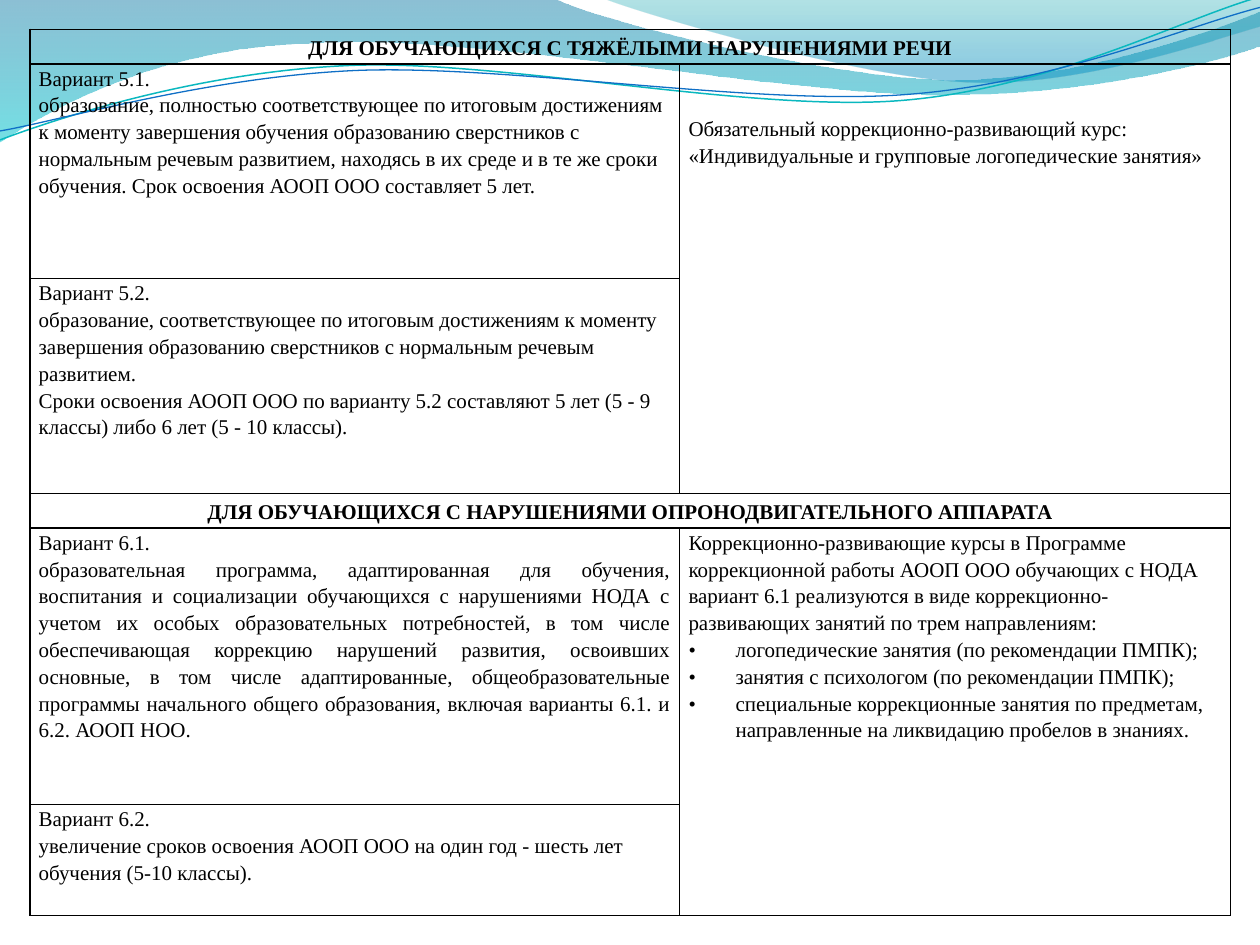
from math import cos, radians, sin

from lxml.etree import SubElement
from pptx import Presentation
from pptx.dml.color import RGBColor
from pptx.enum.text import MSO_ANCHOR, PP_ALIGN
from pptx.oxml.ns import qn
from pptx.util import Cm, Pt

COLORS = {"text": "000000", "border": "000000", "deep": "0074A1", "aqua": "00C6CF",
          "teal": "00A1A9", "sky": "008BBF", "thread": "0AB8BF", "blue": "0F6FC6"}
FORMATS = {
    "heading": {"font": {"bold": True}, "para": {"alignment": PP_ALIGN.CENTER}},
    "plain": {"font": {"bold": False}, "para": {"alignment": PP_ALIGN.LEFT}},
    "justified": {"font": {"bold": False}, "para": {"alignment": PP_ALIGN.JUSTIFY}},
    "bullet": {"font": {"bold": False}, "para": {"alignment": PP_ALIGN.LEFT}},
}
COLUMNS = [13.1, 11.11]
ROWS = [0.7, 4.33, 4.33, 0.7, 5.57, 2.24]
MERGES = [(0, 0, 0, 1), (1, 1, 2, 1), (3, 0, 3, 1), (4, 1, 5, 1)]
CELLS = {
    (0, 0): [("heading", "ДЛЯ ОБУЧАЮЩИХСЯ С ТЯЖЁЛЫМИ НАРУШЕНИЯМИ РЕЧИ")],
    (1, 0): [
        ("plain", "Вариант 5.1."),
        ("plain", "образование, полностью соответствующее по итоговым достижениям к моменту "
                  "завершения обучения образованию сверстников с нормальным речевым развитием, "
                  "находясь в их среде и в те же сроки обучения. Срок освоения АООП ООО "
                  "составляет 5 лет."),
    ],
    (1, 1): [("plain", "Обязательный коррекционно-развивающий курс: "
                       "«Индивидуальные и групповые логопедические занятия»")],
    (2, 0): [
        ("plain", "Вариант 5.2."),
        ("plain", "образование, соответствующее по итоговым достижениям к моменту завершения "
                  "образованию сверстников с нормальным речевым развитием."),
        ("plain", "Сроки освоения АООП ООО по варианту 5.2 составляют 5 лет (5 - 9 классы) "
                  "либо 6 лет (5 - 10 классы)."),
    ],
    (3, 0): [("heading", "ДЛЯ ОБУЧАЮЩИХСЯ С НАРУШЕНИЯМИ ОПРОНОДВИГАТЕЛЬНОГО АППАРАТА")],
    (4, 0): [
        ("plain", "Вариант 6.1."),
        ("justified", "образовательная программа, адаптированная для обучения, воспитания и "
                      "социализации обучающихся с нарушениями НОДА с учетом их особых "
                      "образовательных потребностей, в том числе обеспечивающая коррекцию "
                      "нарушений развития, освоивших основные, в том числе адаптированные, "
                      "общеобразовательные программы начального общего образования, включая "
                      "варианты 6.1. и 6.2. АООП НОО."),
    ],
    (4, 1): [
        ("plain", "Коррекционно-развивающие курсы в Программе коррекционной работы АООП ООО "
                  "обучающих с НОДА вариант 6.1 реализуются в виде коррекционно-развивающих "
                  "занятий по трем направлениям:"),
        ("bullet", "логопедические занятия (по рекомендации ПМПК);"),
        ("bullet", "занятия с психологом (по рекомендации ПМПК);"),
        ("bullet", "специальные коррекционные занятия по предметам, направленные на ликвидацию "
                   "пробелов в знаниях."),
    ],
    (5, 0): [
        ("plain", "Вариант 6.2."),
        ("plain", "увеличение сроков освоения АООП ООО на один год - шесть лет обучения "
                  "(5-10 классы)."),
    ],
}
WIDE_WAVE = [(0, 0), (11.18, -0.03), (12.09, 0.43, 16.87, 1.6, 19.25, 1.6),
             (21.67, 1.6, 24.33, 0.66, 25.4, 0.23), (25.43, 0.91),
             (24.97, 1.12, 22.1, 1.93, 18.95, 1.91), (15.8, 1.91, 9.7, 0.71, 6.53, 0.86),
             (3.28, 0.91, 1.17, 2.11, -0.03, 2.87), (0, 0)]
RIGHT_WAVE = [(12.17, -0.03), (12.93, 0.28, 17.32, 1.57, 19.53, 1.65),
              (21.74, 1.75, 24.41, 0.81, 25.4, 0.53), (25.4, 0), (12.17, -0.03)]
UPPER_THREAD = [(0, 2.82), (1.22, 2.36, 4.01, 1.45, 7.04, 1.32),
                (10.03, 1.19, 15.06, 2.26, 18.11, 2.03), (21.16, 1.8, 23.83, 0.38, 25.35, -0.05)]
LOWER_THREAD = [(0, 2.64), (1.19, 2.44, 4.17, 1.55, 7.19, 1.42),
                (10.24, 1.3, 15.16, 2.13, 18.21, 1.91), (21.23, 1.7, 23.9, 0.53, 25.4, 0.15)]


def turn(point, angle, pivot=(12.67, 1.47)):
    """Turn a point clockwise around the pivot."""
    across, down = point[0] - pivot[0], point[1] - pivot[1]
    c, s = cos(radians(angle)), sin(radians(angle))
    return pivot[0] + across * c - down * s, pivot[1] + across * s + down * c


def assign(target, values):
    """Set attributes from a dict of format values."""
    for name, value in values.items():
        setattr(target, name, value)


class SlideBuilder:
    """Holds the style and the current slide."""

    def __init__(self, page, colors, font="Times New Roman", size=12):
        """Keep the page and its style."""
        self.page = page
        self.colors = colors
        self.font = {"name": font, "size": Pt(size)}

    def rgb(self, name):
        """Look up a colour."""
        return RGBColor.from_string(self.colors[name])

    def curve(self, outline, close, angle=0):
        """Draw an outline of straight and cubic segments, turned by an angle."""
        knots = [pair for segment in outline for pair in zip(segment[::2], segment[1::2])]
        points = [(Cm(x), Cm(y)) for x, y in (turn(knot, -angle) for knot in knots)]
        builder = self.page.shapes.build_freeform(*points[0])
        builder.add_line_segments(points[1:], close=close)
        shape = builder.convert_to_shape()
        shape.shadow.inherit = False
        shape.rotation = angle
        lines = iter(list(shape.element.spPr.iter(qn("a:lnTo"))))
        for segment in outline[1:]:
            first = next(lines)
            if len(segment) == 6:
                first.tag = qn("a:cubicBezTo")
                for line in (next(lines), next(lines)):
                    first.append(line[0])
                    line.getparent().remove(line)
        return shape

    def wave(self, outline, stops):
        """Draw a translucent wave shaded from top to bottom."""
        shape = self.curve(outline, True)
        shape.line.fill.background()
        shape.fill.gradient()
        shape.fill.gradient_angle = 270
        for stop, (position, color, opacity) in zip(shape.fill.gradient_stops, stops):
            stop.position = position
            stop.color.rgb = self.rgb(color)
        for node, stop in zip(shape.element.spPr.iter(qn("a:srgbClr")), stops):
            SubElement(node, qn("a:alpha"), val=str(stop[2] * 1000))

    def thread(self, outline, color, width):
        """Draw a thin open curve."""
        shape = self.curve(outline, False, -2.7)
        shape.fill.background()
        shape.line.color.rgb = self.rgb(color)
        shape.line.width = Pt(width)

    def table(self, left, top, columns, rows, merges, cells):
        """Draw the bordered table with its texts."""
        frame = self.page.shapes.add_table(len(rows), len(columns), Cm(left), Cm(top),
                                           Cm(sum(columns)), Cm(sum(rows)))
        grid = frame.table
        assign(grid, {"first_row": False, "horz_banding": False})
        for column, width in zip(grid.columns, columns):
            column.width = Cm(width)
        for row, height in zip(grid.rows, rows):
            row.height = Cm(height)
        for first_row, first_column, last_row, last_column in merges:
            grid.cell(first_row, first_column).merge(grid.cell(last_row, last_column))
        for cell in grid.iter_cells():
            self.cell_style(cell)
        for place, lines in cells.items():
            self.cell_text(grid.cell(*place), lines)
        return grid

    def cell_style(self, cell):
        """Give a cell its margins, borders and clear fill."""
        assign(cell, {"margin_left": Cm(0.18), "margin_right": Cm(0.18),
                      "margin_top": 0, "margin_bottom": 0})
        properties = cell._tc.get_or_add_tcPr()
        for side in ("lnL", "lnR", "lnT", "lnB"):
            border = SubElement(properties, qn(f"a:{side}"), w=str(Pt(1)))
            fill = SubElement(border, qn("a:solidFill"))
            SubElement(fill, qn("a:srgbClr"), val=self.colors["border"])
        cell.fill.background()

    def cell_text(self, cell, lines):
        """Write paragraphs into a cell."""
        box = cell.text_frame
        for index, (kind, text) in enumerate(lines):
            para = box.add_paragraph() if index else box.paragraphs[0]
            assign(para, {"line_spacing": 1.15, **FORMATS[kind]["para"]})
            span = para.add_run()
            span.text = text
            assign(span.font, {**self.font, **FORMATS[kind]["font"]})
            span.font.color.rgb = self.rgb("text")
            if kind == "bullet":
                properties = para._p.get_or_add_pPr()
                properties.set("marL", str(Cm(0.95)))
                properties.set("indent", str(-Cm(0.95)))
                SubElement(properties, qn("a:buFont"), typeface=self.font["name"])
                SubElement(properties, qn("a:buChar"), char="•")
            if kind == "heading":
                cell.vertical_anchor = MSO_ANCHOR.MIDDLE


def main():
    """Build the slide and save it."""
    deck = Presentation()
    assign(deck, {"slide_width": Cm(25.4), "slide_height": Cm(19.05)})
    builder = SlideBuilder(deck.slides.add_slide(deck.slide_layouts[6]), COLORS)
    builder.wave(WIDE_WAVE, [(0, "deep", 45), (1, "aqua", 55)])
    builder.wave(RIGHT_WAVE, [(0, "teal", 30), (0.8, "sky", 45)])
    builder.thread(UPPER_THREAD, "thread", 0.85)
    builder.thread(LOWER_THREAD, "blue", 0.75)
    grid = builder.table(0.6, 0.59, COLUMNS, ROWS, MERGES, CELLS)
    grid.cell(1, 1).margin_top = Cm(1.02)
    deck.save("out.pptx")


if __name__ == "__main__":
    main()
